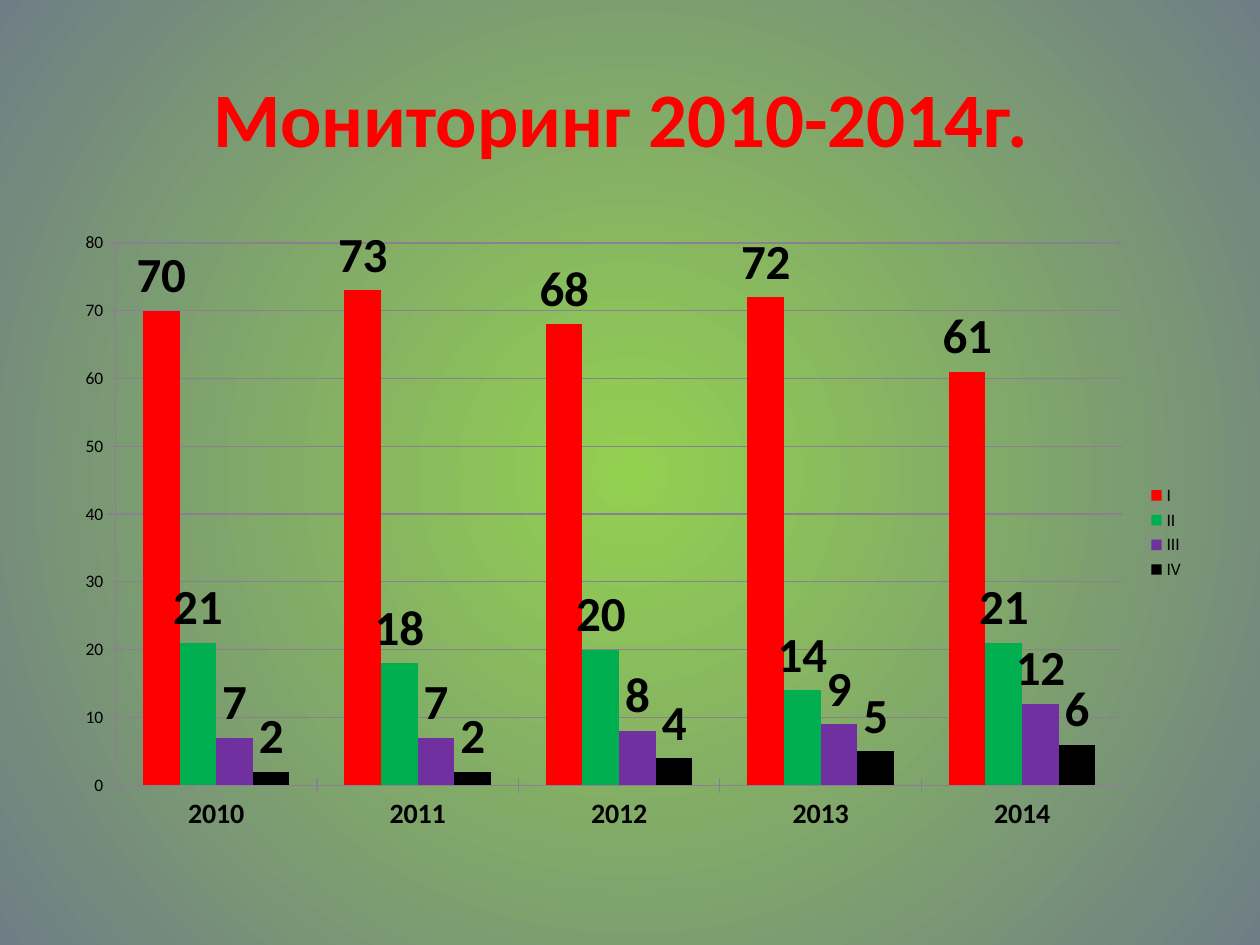
from lxml.etree import SubElement
from pptx import Presentation
from pptx.chart.data import CategoryChartData
from pptx.dml.color import RGBColor
from pptx.enum.chart import XL_CHART_TYPE, XL_LABEL_POSITION, XL_LEGEND_POSITION, XL_TICK_MARK
from pptx.enum.text import MSO_ANCHOR, PP_ALIGN
from pptx.oxml.ns import qn
from pptx.util import Cm, Pt

RED = RGBColor(0xFF, 0x00, 0x00)
GREEN = RGBColor(0x00, 0xB0, 0x50)
PURPLE = RGBColor(0x70, 0x30, 0xA0)
BLACK = RGBColor(0x00, 0x00, 0x00)
LIME = RGBColor(0x92, 0xD0, 0x50)
SLATE = RGBColor(0x6F, 0x7E, 0x85)
GRID = RGBColor(0x8B, 0x80, 0x8F)

YEARS = ["2010", "2011", "2012", "2013", "2014"]
SERIES = {
    "I": (RED, [70, 73, 68, 72, 61]),
    "II": (GREEN, [21, 18, 20, 14, 21]),
    "III": (PURPLE, [7, 7, 8, 9, 12]),
    "IV": (BLACK, [2, 2, 4, 5, 6]),
}


class SlideBuilder:
    """Holds the shared style and the current slide."""

    font_name = "Calibri"

    def __init__(self, presentation):
        self.slide = presentation.slides.add_slide(presentation.slide_layouts[5])

    def apply(self, target, **formats):
        for name, value in formats.items():
            setattr(target, name, value)

    def style_font(self, font, color=BLACK, **formats):
        self.apply(font, name=self.font_name, **formats)
        font.color.rgb = color

    def background(self, inner, outer):
        fill = self.slide.background.fill
        fill.gradient()
        for stop, color, position in zip(fill.gradient_stops, (inner, outer), (0, 1)):
            stop.color.rgb = color
            stop.position = position
        gradient = self.slide.element.find(".//" + qn("a:gradFill"))
        gradient.remove(gradient.find(qn("a:lin")))
        circle = SubElement(gradient, qn("a:path"), path="circle")
        SubElement(circle, qn("a:fillToRect"), l="50000", t="50000", r="50000", b="50000")

    def title(self, text, left, top, width, height):
        shape = self.slide.shapes.title
        self.apply(shape, left=left, top=top, width=width, height=height)
        self.apply(shape.text_frame, text=text, vertical_anchor=MSO_ANCHOR.MIDDLE, word_wrap=True)
        paragraph = shape.text_frame.paragraphs[0]
        paragraph.alignment = PP_ALIGN.CENTER
        self.style_font(paragraph.runs[0].font, RED, size=Pt(44), bold=True)

    def column_chart(self, categories, series_values, left, top, width, height):
        data = CategoryChartData()
        data.categories = categories
        for name, (color, values) in series_values.items():
            data.add_series(name, values)
        chart = self.slide.shapes.add_chart(
            XL_CHART_TYPE.COLUMN_CLUSTERED, left, top, width, height, data
        ).chart
        self.style_font(chart.font, size=Pt(10))
        self.apply(chart, has_title=False, has_legend=True)
        self.apply(chart.legend, position=XL_LEGEND_POSITION.RIGHT, include_in_layout=False)
        self.apply(chart.plots[0], gap_width=150, overlap=0, vary_by_categories=False)
        for series, (color, values) in zip(chart.plots[0].series, series_values.values()):
            self.style_series(series, color)
        self.style_axes(chart)

    def style_series(self, series, color):
        series.format.fill.solid()
        series.format.fill.fore_color.rgb = color
        labels = series.data_labels
        self.apply(labels, show_value=True, position=XL_LABEL_POSITION.OUTSIDE_END)
        self.style_font(labels.font, size=Pt(28), bold=True)

    def style_axes(self, chart):
        for axis in (chart.category_axis, chart.value_axis):
            self.apply(axis, major_tick_mark=XL_TICK_MARK.CROSS)
            axis.format.line.color.rgb = GRID
        self.style_font(chart.category_axis.tick_labels.font, size=Pt(16), bold=True)
        self.apply(chart.value_axis, has_major_gridlines=True, minimum_scale=0,
                   maximum_scale=80, major_unit=10)
        chart.value_axis.major_gridlines.format.line.color.rgb = GRID


def main():
    presentation = Presentation()
    presentation.slide_width = Cm(25.4)
    presentation.slide_height = Cm(19.05)
    builder = SlideBuilder(presentation)
    builder.background(LIME, SLATE)
    builder.title("Мониторинг 2010-2014г. ", Cm(1.27), Cm(0.76), Cm(22.86), Cm(3.18))
    builder.column_chart(YEARS, SERIES, Cm(1.27), Cm(4.45), Cm(22.86), Cm(12.57))
    presentation.save("out.pptx")


if __name__ == "__main__":
    main()
